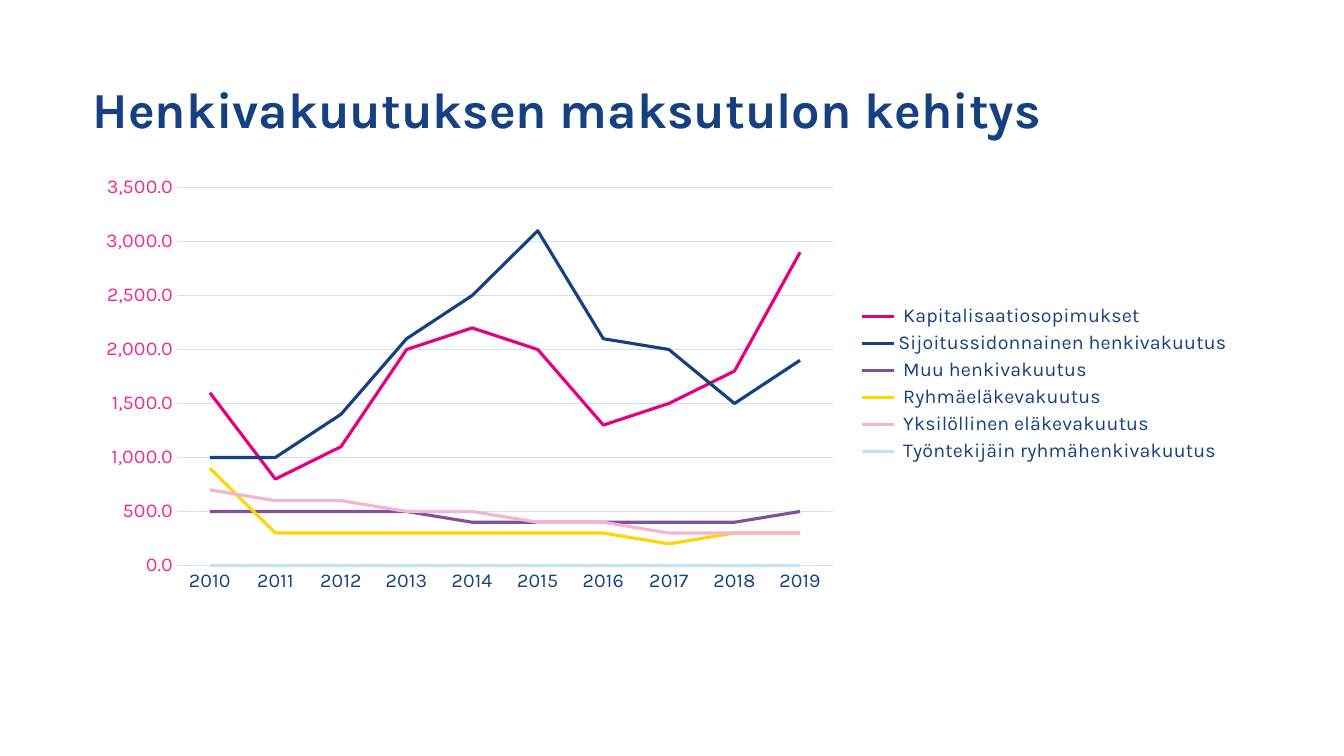
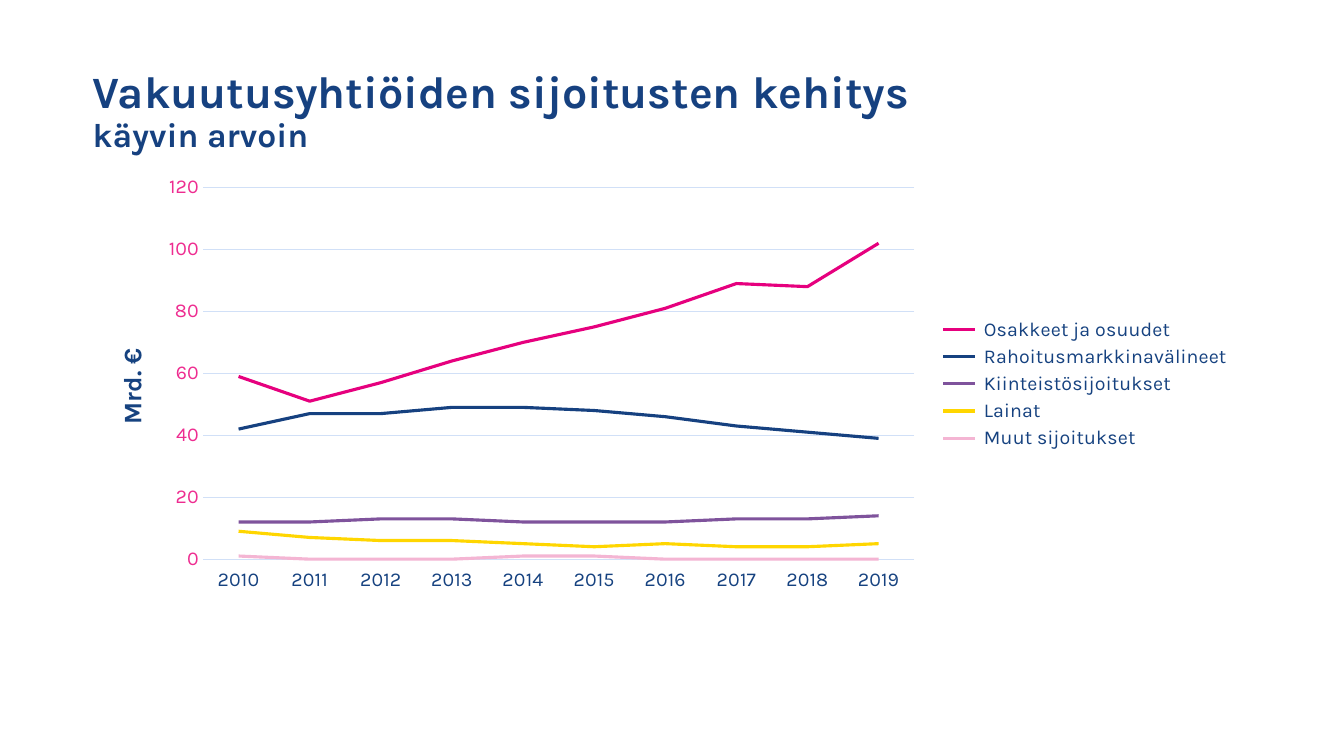
"""Build two slides with line charts on insurance figures."""
from dataclasses import dataclass

from lxml import etree
from pptx import Presentation
from pptx.chart.data import CategoryChartData
from pptx.dml.color import RGBColor
from pptx.enum import chart as ec, text as et
from pptx.oxml.ns import qn
from pptx.util import Pt

FONT = "Karla"
INK = {"title": "164180", "text": "164280", "value": "EE2C90",
       "grid": "D1E0F7", "page": "FFFFFF"}
LINES = ["E6007E", "164180", "7F539C", "FFD600", "F4B5D3", "BCE3FA"]
YEARS = [str(y) for y in range(2010, 2020)]
HEAD = (59, 28, 828, 104.5)
AREA = (59, 119.5, 828, 309.5)


@dataclass
class Page:
    """Content of one chart slide."""
    head: list[tuple[str, int]]
    plot: tuple[float, float, float, float]
    top: int
    step: int
    form: str
    rows: dict[str, list[int]]
    unit: str = ""
    low: bool = False


PAGES = [
    Page([("Henkivakuutuksen maksutulon kehitys", 36)],
         (126.5, 134, 468.5, 270), 3500, 500, "#,##0.0", {
        " Kapitalisaatiosopimukset":
            [1600, 800, 1100, 2000, 2200, 2000, 1300, 1500, 1800, 2900],
        "Sijoitussidonnainen henkivakuutus":
            [1000, 1000, 1400, 2100, 2500, 3100, 2100, 2000, 1500, 1900],
        " Muu henkivakuutus":
            [500, 500, 500, 500, 400, 400, 400, 400, 400, 500],
        " Ryhmäeläkevakuutus":
            [900, 300, 300, 300, 300, 300, 300, 200, 300, 300],
        " Yksilöllinen eläkevakuutus":
            [700, 600, 600, 500, 500, 400, 400, 300, 300, 300],
        " Työntekijäin ryhmähenkivakuutus": [0] * 10,
    }),
    Page([("Vakuutusyhtiöiden sijoitusten kehitys", 32), ("käyvin arvoin", 24)],
         (145, 134, 508, 265.5), 120, 20, "0", {
        " Osakkeet ja osuudet": [59, 51, 57, 64, 70, 75, 81, 89, 88, 102],
        " Rahoitusmarkkinavälineet": [42, 47, 47, 49, 49, 48, 46, 43, 41, 39],
        " Kiinteistösijoitukset": [12, 12, 13, 13, 12, 12, 12, 13, 13, 14],
        " Lainat": [9, 7, 6, 6, 5, 4, 5, 4, 4, 5],
        " Muut sijoitukset": [1, 0, 0, 0, 1, 1, 0, 0, 0, 0],
    }, "Mrd. €", True),
]


def style(font, size: float, ink: str, bold: bool = False) -> None:
    """Set the face, size, colour and weight of a font."""
    font.name, font.size, font.bold = FONT, Pt(size), bold
    font.color.rgb = RGBColor.from_string(INK[ink])


def stroke(line, ink: str, width: float) -> None:
    """Set the colour and width of a line."""
    line.color.rgb = RGBColor.from_string(ink)
    line.width = Pt(width)


def place(node, box: tuple, inner: bool = False) -> None:
    """Fix a chart part at a slide position given in points."""
    lay = node.find(qn("c:layout"))
    if lay is None:
        lay = etree.Element(qn("c:layout"))
        node.insert(0, lay)
    man = etree.SubElement(lay, qn("c:manualLayout"))
    if inner:
        etree.SubElement(man, qn("c:layoutTarget"), val="inner")
    for key in "xy":
        etree.SubElement(man, qn(f"c:{key}Mode"), val="edge")
    parts = [(box[0] - AREA[0]) / AREA[2], (box[1] - AREA[1]) / AREA[3]]
    if inner:
        parts += [box[2] / AREA[2], box[3] / AREA[3]]
    for key, part in zip("xywh", parts):
        etree.SubElement(man, qn(f"c:{key}"), val=f"{part:.4f}")


def add_head(slide, page: Page) -> None:
    """Place the title and fill it run by run."""
    box = slide.shapes.title
    box.left, box.top, box.width, box.height = map(Pt, HEAD)
    frame = box.text_frame
    frame.auto_size = et.MSO_AUTO_SIZE.NONE
    frame.word_wrap = True
    frame.vertical_anchor = et.MSO_ANCHOR.MIDDLE
    para = frame.paragraphs[0]
    para.alignment = et.PP_ALIGN.LEFT
    para.line_spacing = 0.9
    for i, (words, size) in enumerate(page.head):
        if i:
            para.add_line_break()
            etree.SubElement(para._p[-1], qn("a:rPr"), sz=str(size * 100))
        run = para.add_run()
        run.text = words
        style(run.font, size, "title", True)


def add_unit(axis, unit: str) -> None:
    """Write the upright title of the value axis."""
    title = axis.axis_title
    frame = title.text_frame
    run = frame.paragraphs[0].add_run()
    run.text = unit
    style(run.font, 18, "text", True)
    body = frame._txBody.find(qn("a:bodyPr"))
    body.set("rot", "-5400000")
    body.set("vert", "horz")
    place(title._element, (79, 246))


def add_plot(slide, page: Page) -> None:
    """Draw the line chart with its axes and legend."""
    data = CategoryChartData()
    data.categories = YEARS
    for name, vals in page.rows.items():
        data.add_series(name, vals)
    chart = slide.shapes.add_chart(
        ec.XL_CHART_TYPE.LINE, *map(Pt, AREA), data).chart
    style(chart.font, 14, "text")
    chart.has_title = False
    chart.has_legend = True
    chart.legend.position = ec.XL_LEGEND_POSITION.RIGHT
    chart.legend.include_in_layout = False
    style(chart.legend.font, 14, "text")
    plot = chart.plots[0]
    plot.vary_by_categories = False
    for row, ink in zip(plot.series, LINES):
        row.smooth = False
        stroke(row.format.line, ink, 2.25)
    years, vals = chart.category_axis, chart.value_axis
    for axis, ink in ((years, "text"), (vals, "value")):
        axis.major_tick_mark = axis.minor_tick_mark = ec.XL_TICK_MARK.NONE
        style(axis.tick_labels.font, 14, ink)
    stroke(years.format.line, INK["grid"], 0.75)
    if page.low:
        years.tick_label_position = ec.XL_TICK_LABEL_POSITION.LOW
    vals.minimum_scale, vals.maximum_scale = 0, page.top
    vals.major_unit = page.step
    vals.tick_labels.number_format = page.form
    vals.tick_labels.number_format_is_linked = False
    vals.format.line.fill.background()
    stroke(vals.major_gridlines.format.line, INK["grid"], 0.75)
    vals.has_title = bool(page.unit)
    if page.unit:
        add_unit(vals, page.unit)
    place(chart._chartSpace.find(".//" + qn("c:plotArea")), page.plot, True)


def main() -> None:
    """Build and save the deck."""
    deck = Presentation()
    deck.slide_width, deck.slide_height = Pt(960), Pt(540)
    fill = deck.slide_master.background.fill
    fill.solid()
    fill.fore_color.rgb = RGBColor.from_string(INK["page"])
    for page in PAGES:
        slide = deck.slides.add_slide(deck.slide_layouts[5])
        add_head(slide, page)
        add_plot(slide, page)
    deck.save("out.pptx")


if __name__ == "__main__":
    main()
